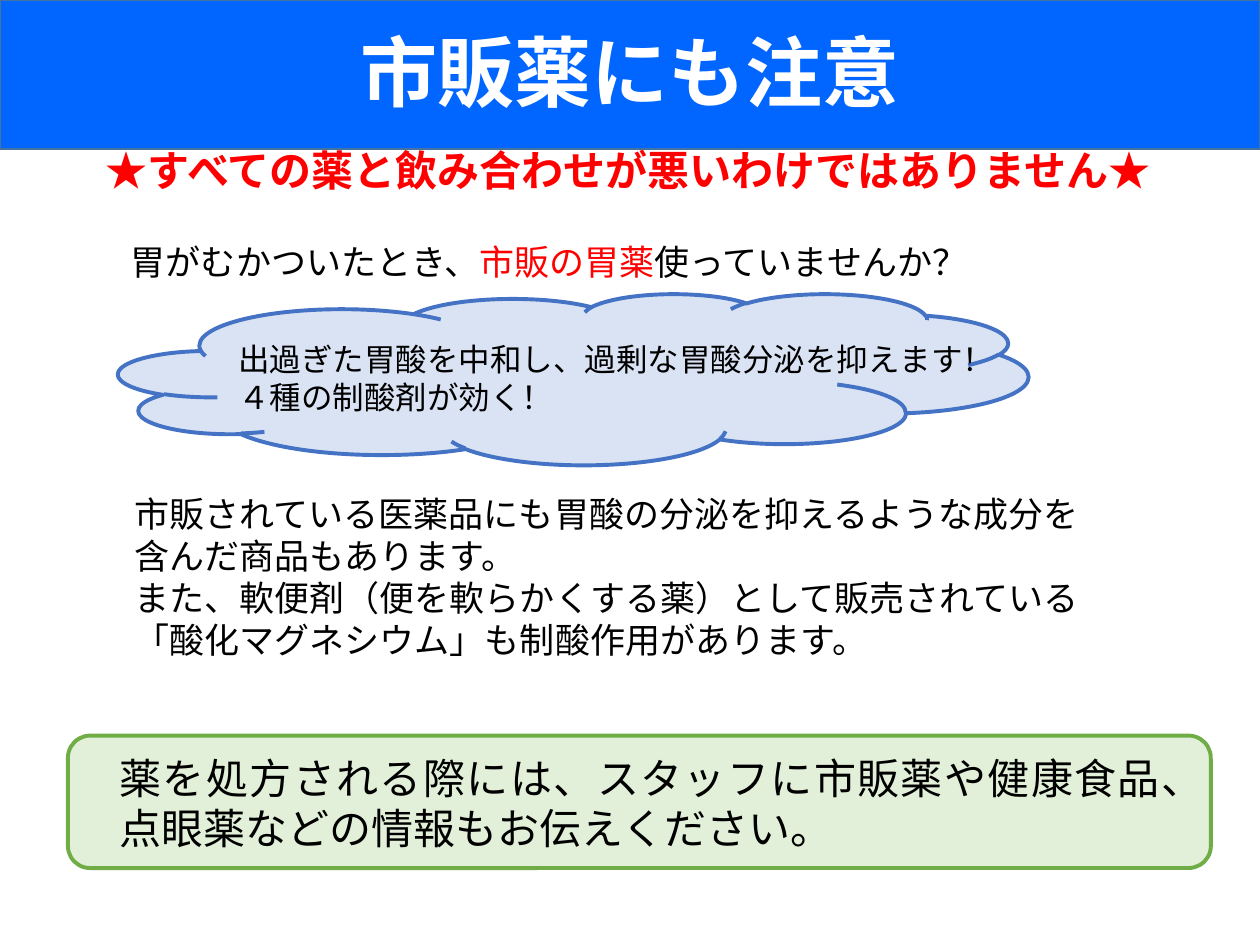
from typing import NamedTuple

from lxml import etree
from pptx import Presentation
from pptx.dml.color import RGBColor
from pptx.enum.shapes import MSO_SHAPE
from pptx.enum.text import MSO_ANCHOR, PP_ALIGN
from pptx.oxml.ns import qn
from pptx.util import Cm, Pt

RECT = MSO_SHAPE.RECTANGLE
ROUND = MSO_SHAPE.ROUNDED_RECTANGLE
CLOUD = MSO_SHAPE.CLOUD
LEFT, CENTER, JUSTIFY = PP_ALIGN.LEFT, PP_ALIGN.CENTER, PP_ALIGN.JUSTIFY
TOP, MIDDLE = MSO_ANCHOR.TOP, MSO_ANCHOR.MIDDLE

BLACK = RGBColor(0x00, 0x00, 0x00)
WHITE = RGBColor(0xFF, 0xFF, 0xFF)
RED = RGBColor(0xFF, 0x00, 0x00)
BLUE = RGBColor(0x00, 0x66, 0xFF)
STEEL = RGBColor(0x43, 0x73, 0x9E)
SKY = RGBColor(0xDA, 0xE3, 0xF3)
NAVY = RGBColor(0x44, 0x72, 0xC4)
MINT = RGBColor(0xE2, 0xF0, 0xD9)
GREEN = RGBColor(0x70, 0xAD, 0x47)

FONT = "Noto Sans CJK JP"
LEADING = 1.2


class Box(NamedTuple):
    """Left, top, width and height in centimetres."""
    x: float
    y: float
    w: float
    h: float


class Span(NamedTuple):
    text: str
    color: RGBColor


def add_panel(slide, kind, box: Box, fill: RGBColor, line: RGBColor,
              width: float = 2.25) -> None:
    shape = slide.shapes.add_shape(kind, *map(Cm, box))
    shape.shadow.inherit = False
    shape.fill.solid()
    shape.fill.fore_color.rgb = fill
    shape.line.color.rgb = line
    shape.line.width = Pt(width)


def add_text(slide, box: Box, paras: list[list[Span]], *, size: float,
             bold: bool = False, align=LEFT, anchor=TOP,
             space=None) -> None:
    """Each paragraph is a list of coloured spans."""
    frame = slide.shapes.add_textbox(*map(Cm, box)).text_frame
    frame.word_wrap = True
    frame.vertical_anchor = anchor
    for i, spans in enumerate(paras):
        para = frame.paragraphs[0] if i == 0 else frame.add_paragraph()
        para.alignment = align
        para.line_spacing = space or Pt(size * LEADING)
        for span in spans:
            run = para.add_run()
            run.text = span.text
            font = run.font
            font.size, font.bold, font.name = Pt(size), bold, FONT
            font.color.rgb = span.color
            east = etree.SubElement(run._r.get_or_add_rPr(), qn("a:ea"))
            east.set("typeface", FONT)


def main() -> None:
    deck = Presentation()
    deck.slide_width, deck.slide_height = Cm(25.4), Cm(19.05)
    slide = deck.slides.add_slide(deck.slide_layouts[6])

    add_panel(slide, ROUND, Box(1.37, 14.83, 23.04, 2.67), MINT, GREEN)
    add_panel(slide, RECT, Box(0, 0, 25.4, 3), BLUE, STEEL, 1)
    add_text(slide, Box(0, -0.1, 25.4, 3.28),
             [[Span("市販薬にも注意", WHITE)]],
             size=44, bold=True, align=CENTER, anchor=MIDDLE, space=0.9)
    add_text(slide, Box(0.56, 2.79, 24.2, 1.27),
             [[Span("★すべての薬と飲み合わせが悪いわけではありません★", RED)]],
             size=24, bold=True, align=CENTER)
    add_text(slide, Box(2.39, 4.72, 20.78, 1.12),
             [[Span("胃がむかついたとき、", BLACK), Span("市販の胃薬", RED),
               Span("使っていませんか？", BLACK)]], size=20)
    add_text(slide, Box(2.46, 9.8, 20.04, 3.68),
             [[Span("市販されている医薬品にも胃酸の分泌を抑えるような成分を"
                    "含んだ商品もあります。", BLACK)],
              [Span("また、軟便剤（便を軟らかくする薬）として販売されている"
                    "「酸化マグネシウム」も制酸作用があります。", BLACK)]], size=20)
    add_panel(slide, CLOUD, Box(2.39, 5.92, 18.34, 3.45), SKY, NAVY)
    add_text(slide, Box(4.55, 6.73, 15.62, 1.8),
             [[Span("出過ぎた胃酸を中和し、過剰な胃酸分泌を抑えます！", BLACK)],
              [Span("４種の制酸剤が効く！", BLACK)]], size=18)
    add_text(slide, Box(2.16, 15.04, 21.51, 2.31),
             [[Span("薬を処方される際には、スタッフに市販薬や健康食品、"
                    "点眼薬などの情報もお伝えください。", BLACK)]],
             size=24, align=JUSTIFY)

    deck.save("out.pptx")


if __name__ == "__main__":
    main()
